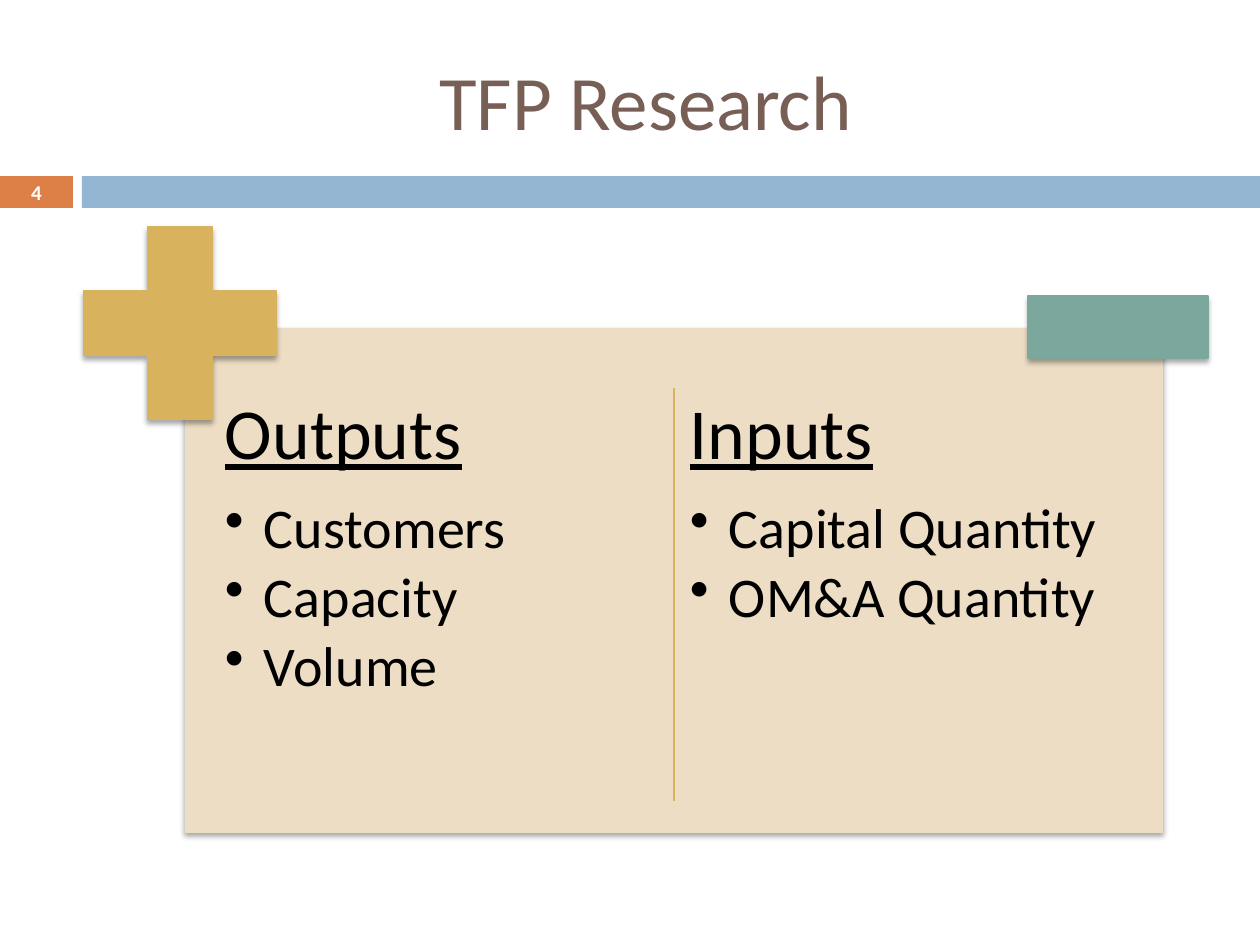
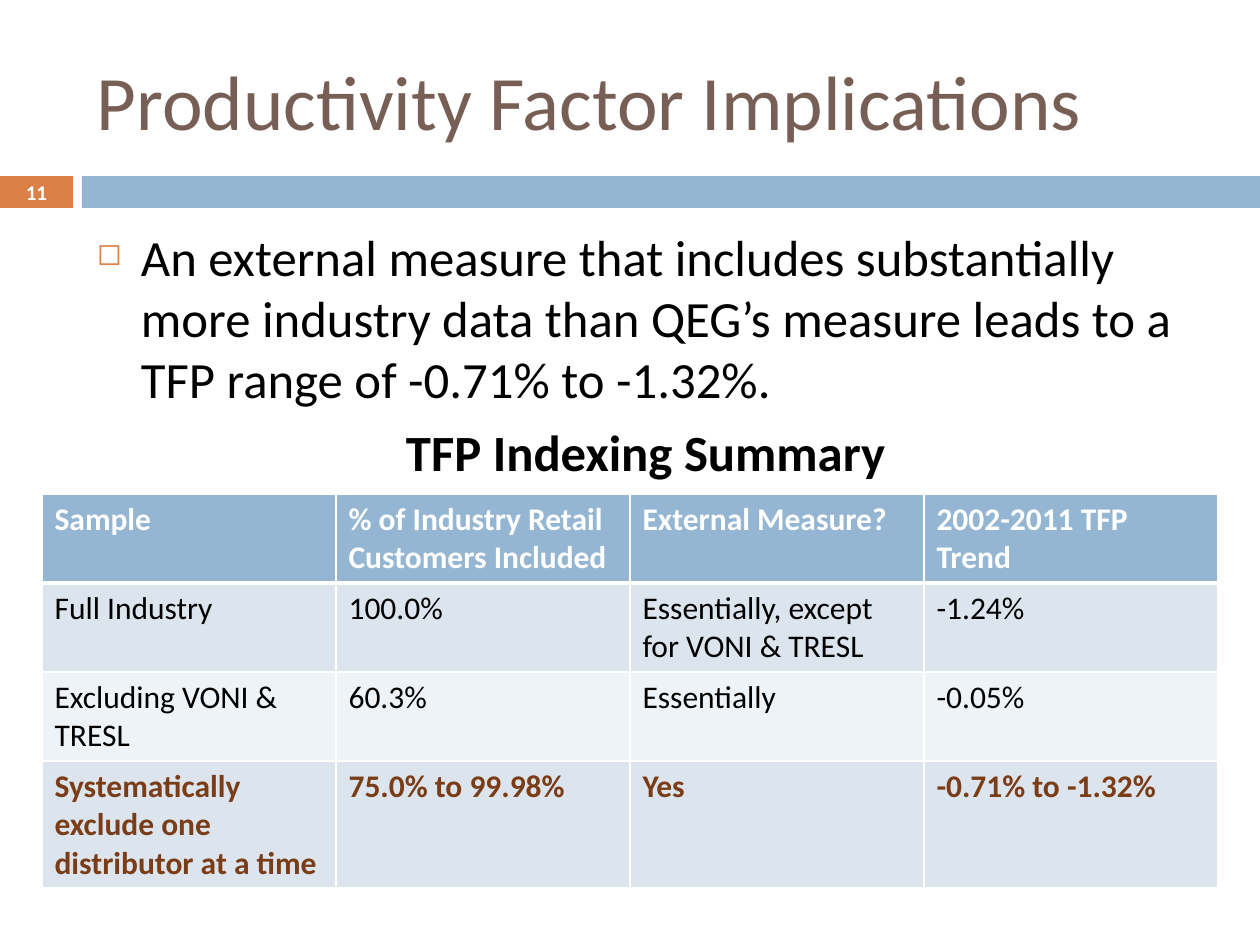
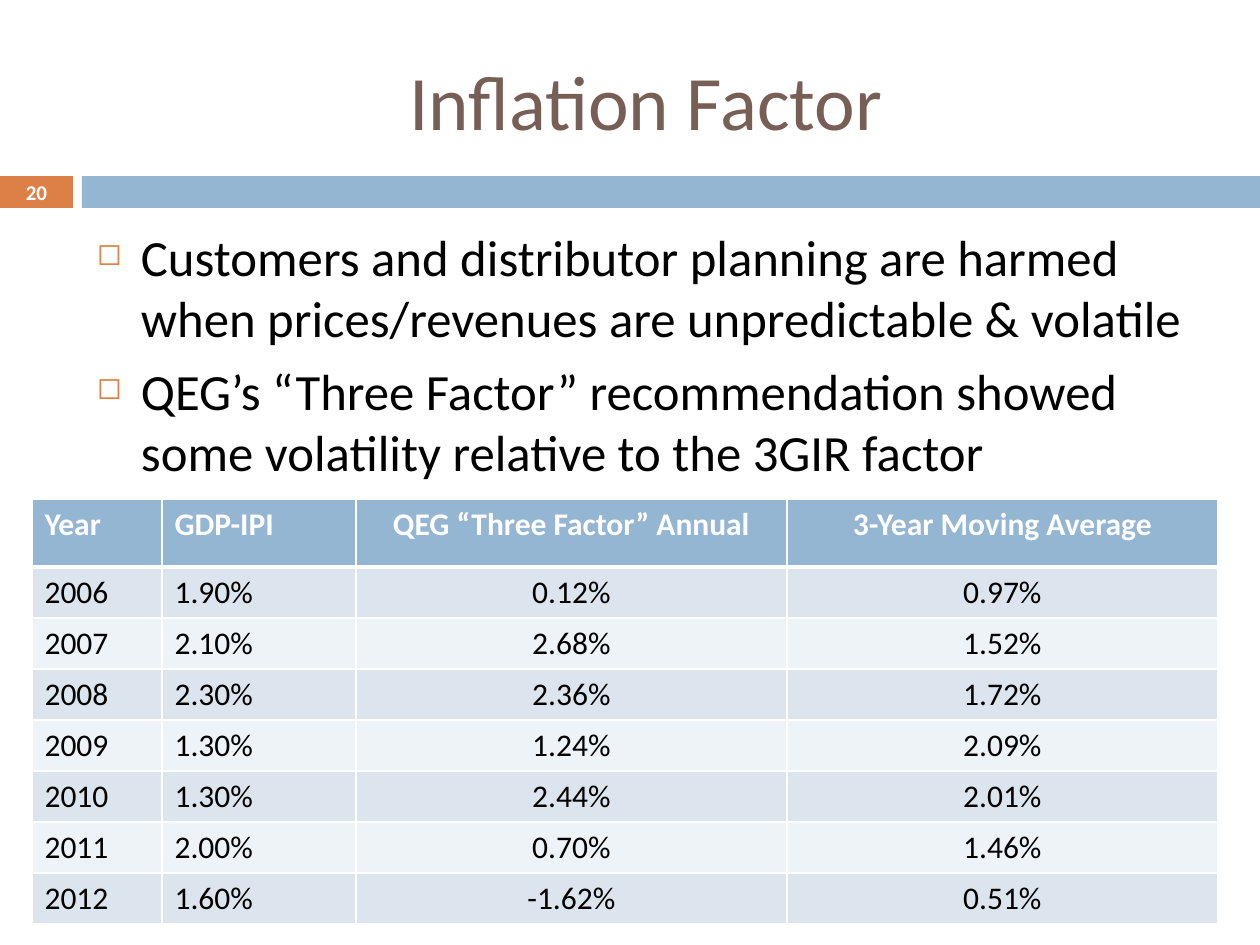
import pptx
import pptx.dml.color
import pptx.enum.shapes
import pptx.enum.text
import pptx.oxml
import pptx.oxml.ns
import pptx.util
import lxml.etree

SCALE = 914400 / 126
PAGE = (0, 0, 1260, 945)
BODY = (84, 220, 1124, 620)
ORANGE, BLUE, BROWN = "DD8047", "94B6D2", "775F55"
GOLD, GREEN, SAND = "D8B25C", "7BA79D", "EDDDC4"
BLACK, WHITE, RUST = "000000", "FFFFFF", "7B3D17"
BANDS = ("DCE5EE", "EEF3F7")

ALIGN = pptx.enum.text.PP_ALIGN
ANCHOR = pptx.enum.text.MSO_ANCHOR
SHAPE = pptx.enum.shapes.MSO_SHAPE
Pt = pptx.util.Pt

TITLE = {"size": Pt(44), "color": BROWN}
NUMBER = {"size": Pt(12), "color": WHITE, "bold": True}
POINT = {"size": Pt(29), "color": BLACK}
CAPTION = POINT | {"bold": True}
HEADING = {"size": Pt(41), "color": BLACK, "underline": True}
ITEM = {"size": Pt(32), "color": BLACK}
HEADER = {"size": Pt(18), "color": WHITE, "bold": True}
CELL = {"size": Pt(18), "color": BLACK, "bold": False}
KEY_CELL = CELL | {"color": RUST, "bold": True}

POINT_PARA = {"space_before": Pt(7)}
CAPTION_PARA = POINT_PARA | {"alignment": ALIGN.CENTER}
HEADING_PARA = {"line_spacing": 0.9, "space_after": Pt(14)}
ITEM_PARA = {"line_spacing": 0.9, "space_after": Pt(4.8)}
CENTRED = {"alignment": ALIGN.CENTER}

INDUSTRY_ROWS = [
    ("Sample", "% of Industry Retail Customers Included", "External Measure?", "2002-2011 TFP Trend"),
    ("Full Industry", "100.0%", "Essentially, except for VONI & TRESL", "-1.24%"),
    ("Excluding VONI & TRESL", "60.3%", "Essentially", "-0.05%"),
    ("Systematically exclude one distributor at a time", "75.0% to 99.98%", "Yes", "-0.71% to -1.32%"),
]
INFLATION_ROWS = [
    ("Year", "GDP-IPI", "QEG “Three Factor” Annual", "3-Year Moving Average"),
    ("2006", "1.90%", "0.12%", "0.97%"),
    ("2007", "2.10%", "2.68%", "1.52%"),
    ("2008", "2.30%", "2.36%", "1.72%"),
    ("2009", "1.30%", "1.24%", "2.09%"),
    ("2010", "1.30%", "2.44%", "2.01%"),
    ("2011", "2.00%", "0.70%", "1.46%"),
    ("2012", "1.60%", "-1.62%", "0.51%"),
]


def px(*lengths):
    return [round(length * SCALE) for length in lengths]


def colour(code):
    return pptx.dml.color.RGBColor.from_string(code)


def add_xml(parent, tag, **attributes):
    return lxml.etree.SubElement(parent, pptx.oxml.ns.qn(tag), {k: str(v) for k, v in attributes.items()})


def write(para, text, font, layout=None):
    for name, value in (layout or {}).items():
        setattr(para, name, value)
    span = para.add_run()
    span.text = text
    span.font.name = "Calibri"
    for name, value in font.items():
        if name == "color":
            span.font.color.rgb = colour(value)
        else:
            setattr(span.font, name, value)


def add_bullet(para, mark, indent, tint=None, percent=100):
    properties = para._p.get_or_add_pPr()
    [width] = px(indent)
    properties.set("marL", str(width))
    properties.set("indent", str(-width))
    if tint:
        add_xml(add_xml(properties, "a:buClr"), "a:srgbClr", val=tint)
    add_xml(properties, "a:buSzPct", val=percent * 1000)
    add_xml(properties, "a:buChar", char=mark)


def add_text(page, box, paragraphs, anchor=ANCHOR.TOP, inset=(13, 6)):
    frame = page.shapes.add_textbox(*px(*box)).text_frame
    side, end = px(*inset)
    settings = {
        "word_wrap": True, "vertical_anchor": anchor,
        "margin_left": side, "margin_right": side, "margin_top": end, "margin_bottom": end,
    }
    for name, value in settings.items():
        setattr(frame, name, value)
    for index, (text, font, layout, bullet) in enumerate(paragraphs):
        para = frame.add_paragraph() if index else frame.paragraphs[0]
        write(para, text, font, layout)
        if bullet:
            add_bullet(para, *bullet)


def add_block(page, kind, box, fill, outlined=False, shadowed=False):
    block = page.shapes.add_shape(kind, *px(*box))
    block.shadow.inherit = False
    block.fill.solid()
    block.fill.fore_color.rgb = colour(fill)
    if outlined:
        block.line.color.rgb = colour(fill)
        block.line.width = Pt(0.79)
    else:
        block.line.fill.background()
    if shadowed:
        effects = block._element.spPr.find(pptx.oxml.ns.qn("a:effectLst"))
        shadow = add_xml(effects, "a:outerShdw", blurRad=Pt(3), dist=Pt(2), dir=5400000, rotWithShape=0)
        add_xml(add_xml(shadow, "a:srgbClr", val=BLACK), "a:alpha", val=35000)
    return block


def add_frame(deck, box, title, number, alignment=ALIGN.CENTER):
    page = deck.slides.add_slide(deck.slide_layouts[6])
    left, top, width, height = box
    band_top = top + 176
    add_block(page, SHAPE.RECTANGLE, (left, band_top, 73, 32), ORANGE)
    add_block(page, SHAPE.RECTANGLE, (left + 82, band_top, width - 82, 32), BLUE)
    add_text(page, (left + 84, top + 32, 1124, 136),
             [(title, TITLE, {"alignment": alignment}, None)], ANCHOR.MIDDLE)
    add_text(page, (left, band_top - 1, 73, 34),
             [(number, NUMBER, CENTRED, None)], ANCHOR.MIDDLE)
    return page


def add_body(page, box, points, caption=None):
    paragraphs = [(point, POINT, POINT_PARA, ("◻", 44, ORANGE, 60)) for point in points]
    if caption:
        paragraphs.append((caption, CAPTION, CAPTION_PARA, None))
    add_text(page, box, paragraphs)


def add_comparison(page, box, columns):
    left, top, width, height = box
    add_block(page, SHAPE.RECTANGLE, box, SAND, shadowed=True)
    for index, (heading, items) in enumerate(columns):
        paragraphs = [(heading, HEADING, HEADING_PARA, None)]
        paragraphs += [(item, ITEM, ITEM_PARA, ("•", 39)) for item in items]
        add_text(page, (left + 29 + 465 * index, top + 59, 454, 432), paragraphs, inset=(11, 11))
    plus = add_block(page, SHAPE.CROSS, (left - 101, top - 101, 192, 192), GOLD, True, True)
    plus.adjustments[0] = 0.33
    add_block(page, SHAPE.RECTANGLE, (left + width - 135, top - 32, 180, 62), GREEN, True, True)
    middle = left + width // 2
    divider = page.shapes.add_connector(
        pptx.enum.shapes.MSO_CONNECTOR.STRAIGHT, *px(middle, top + 60, middle, top + 473))
    divider.line.color.rgb = colour(GOLD)
    divider.line.width = Pt(1.5)
    add_xml(divider._element.spPr, "a:effectLst")


def add_borders(cell, top, bottom):
    properties = cell._tc.get_or_add_tcPr()
    for side, points in (("L", 1), ("R", 1), ("T", top), ("B", bottom)):
        line = add_xml(properties, f"a:ln{side}", w=Pt(points))
        add_xml(add_xml(line, "a:solidFill"), "a:srgbClr", val=WHITE)


def add_grid(page, corner, widths, heights, rows, centred=(), key_row=None):
    box = (*corner, sum(widths), sum(heights))
    table = page.shapes.add_table(len(rows), len(widths), *px(*box)).table
    for column, width in zip(table.columns, px(*widths)):
        column.width = width
    for row, height in zip(table.rows, px(*heights)):
        row.height = height
    for r, texts in enumerate(rows):
        font = HEADER if r == 0 else KEY_CELL if r == key_row else CELL
        fill = BANDS[(r - 1) % 2] if r else BLUE
        for c, text in enumerate(texts):
            cell = table.cell(r, c)
            add_borders(cell, 3 if r == 1 else 1, 3 if r == 0 else 1)
            cell.fill.solid()
            cell.fill.fore_color.rgb = colour(fill)
            write(cell.text_frame.paragraphs[0], text, font, CENTRED if c in centred else None)


def main():
    deck = pptx.Presentation()
    deck.slide_width, deck.slide_height = px(*PAGE[2:])

    research = add_frame(deck, PAGE, "TFP Research", "4")
    add_comparison(research, (185, 328, 978, 505), [
        ("Outputs", ["Customers", "Capacity", "Volume"]),
        ("Inputs", ["Capital Quantity", "OM&A Quantity"]),
    ])

    productivity = add_frame(deck, PAGE, "Productivity Factor Implications", "11", ALIGN.LEFT)
    add_body(productivity, BODY, [
        "An external measure that includes substantially more industry data than QEG’s measure "
        "leads to a TFP range of -0.71% to -1.32%.",
    ], "TFP Indexing Summary")
    add_grid(productivity, (42, 494), [294] * 4, [89, 89, 89, 127], INDUSTRY_ROWS, key_row=3)

    inflation = add_frame(deck, PAGE, "Inflation Factor", "20")
    add_body(inflation, BODY, [
        "Customers and distributor planning are harmed when prices/revenues are unpredictable & volatile",
        "QEG’s “Three Factor” recommendation showed some volatility relative to the 3GIR factor",
    ])
    add_grid(inflation, (32, 499), [130, 194, 431, 431], [68] + [51] * 7, INFLATION_ROWS, centred=(2, 3))

    deck.save("out.pptx")


if __name__ == "__main__":
    main()
